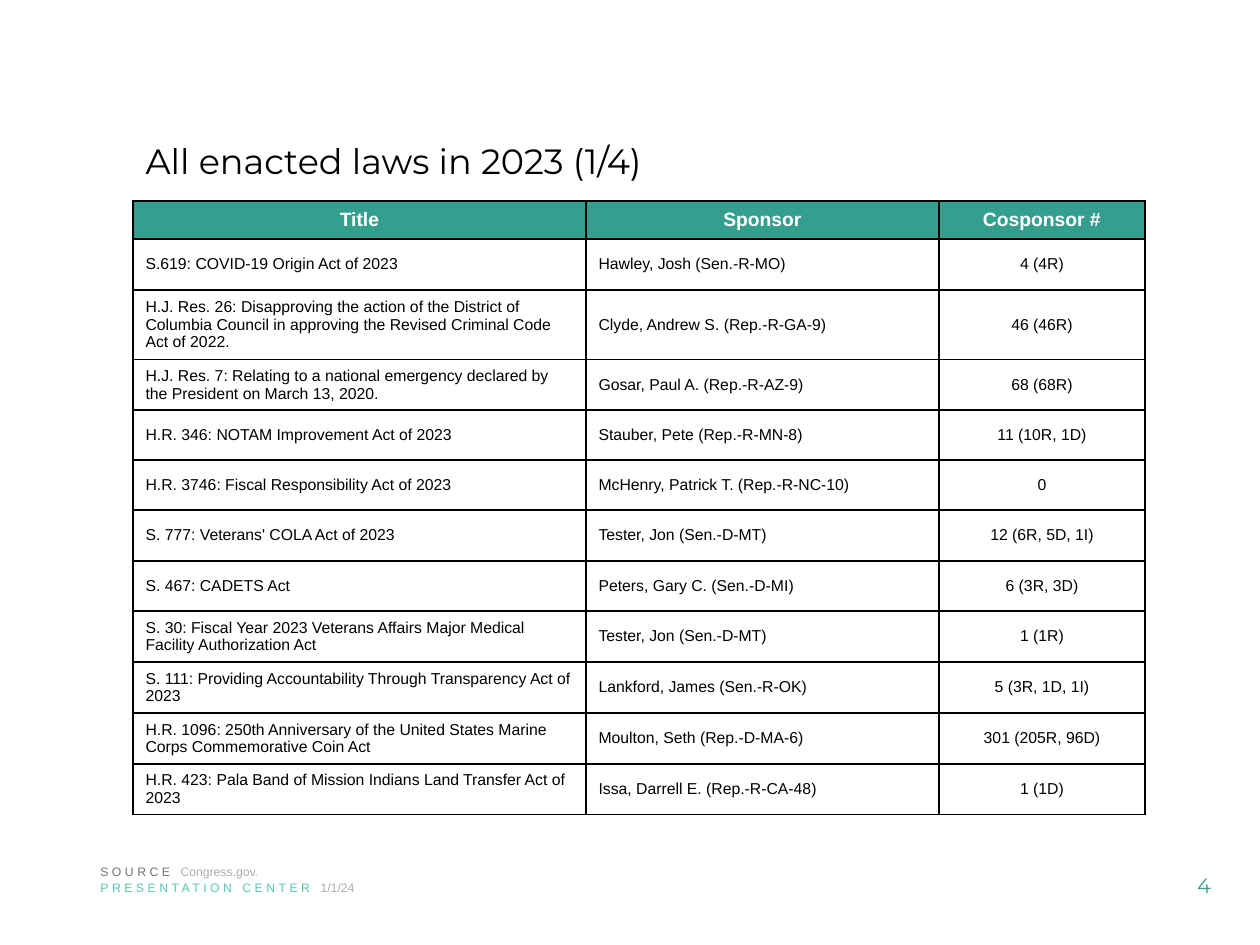
from dataclasses import dataclass

from lxml import etree
from pptx import Presentation
from pptx import util as u
from pptx.dml.color import RGBColor
from pptx.enum import text
from pptx.oxml.ns import qn

SCALE = 914400 / 126


@dataclass(frozen=True)
class Theme:
    head: str = "Montserrat"
    body: str = "Arial"
    ink: str = "000000"
    paper: str = "FFFFFF"
    teal: str = "359F8F"
    mint: str = "55C6B5"
    gray: str = "767171"
    pale: str = "AFABAB"
    title: int = 20
    page: int = 12
    label: int = 11
    cell: int = 9
    note: int = 7


T = Theme()
LEFT, MID = text.PP_ALIGN.LEFT, text.PP_ALIGN.CENTER
COLS = (("Title", 453, LEFT), ("Sponsor", 353, LEFT), ("Cosponsor #", 206, MID))
HEAD_H = 38
LAWS = (  # row height, title, sponsor, cosponsors
    (51, "S.619: COVID-19 Origin Act of 2023", "Hawley, Josh (Sen.-R-MO)", "4 (4R)"),
    (66, "H.J. Res. 26: Disapproving the action of the District of Columbia Council "
     "in approving the Revised Criminal Code Act of 2022.",
     "Clyde, Andrew S. (Rep.-R-GA-9)", "46 (46R)"),
    (50, "H.J. Res. 7: Relating to a national emergency declared by the President "
     "on March 13, 2020.", "Gosar, Paul A. (Rep.-R-AZ-9)", "68 (68R)"),
    (50, "H.R. 346: NOTAM Improvement Act of 2023",
     "Stauber, Pete (Rep.-R-MN-8)", "11 (10R, 1D)"),
    (50, "H.R. 3746: Fiscal Responsibility Act of 2023",
     "McHenry, Patrick T. (Rep.-R-NC-10)", "0"),
    (51, "S. 777: Veterans' COLA Act of 2023", "Tester, Jon (Sen.-D-MT)", "12 (6R, 5D, 1I)"),
    (50, "S. 467: CADETS Act", "Peters, Gary C. (Sen.-D-MI)", "6 (3R, 3D)"),
    (51, "S. 30: Fiscal Year 2023 Veterans Affairs Major Medical Facility "
     "Authorization Act", "Tester, Jon (Sen.-D-MT)", "1 (1R)"),
    (51, "S. 111: Providing Accountability Through Transparency Act of 2023",
     "Lankford, James (Sen.-R-OK)", "5 (3R, 1D, 1I)"),
    (51, "H.R. 1096: 250th Anniversary of the United States Marine Corps "
     "Commemorative Coin Act", "Moulton, Seth (Rep.-D-MA-6)", "301 (205R, 96D)"),
    (50, "H.R. 423: Pala Band of Mission Indians Land Transfer Act of 2023",
     "Issa, Darrell E. (Rep.-R-CA-48)", "1 (1D)"),
)


def px(n):
    return u.Emu(round(n * SCALE))


def style(font, face, size, color, bold=False):
    font.name, font.size, font.bold = face, u.Pt(size), bold
    font.color.rgb = RGBColor.from_string(color)


def title(slide, box, words):
    shape = slide.shapes.title
    shape.left, shape.top, shape.width, shape.height = map(px, box)
    frame = shape.text_frame
    frame.text = words
    frame.vertical_anchor = text.MSO_ANCHOR.MIDDLE
    para = frame.paragraphs[0]
    para.alignment, para.line_spacing = LEFT, 0.9
    style(para.font, T.head, T.title, T.ink)


def border(cell):
    """Draw a thin line on all four sides; call before setting the fill."""
    props = cell._tc.get_or_add_tcPr()
    for side in ("lnL", "lnR", "lnT", "lnB"):
        line = etree.SubElement(props, qn("a:" + side), w=str(u.Pt(1)))
        fill = etree.SubElement(line, qn("a:solidFill"))
        etree.SubElement(fill, qn("a:srgbClr"), val=T.ink)


def put(cell, words, align, head):
    border(cell)
    if head:
        cell.fill.solid()
        cell.fill.fore_color.rgb = RGBColor.from_string(T.teal)
    else:
        cell.fill.background()
    cell.text = words
    cell.vertical_anchor = text.MSO_ANCHOR.MIDDLE
    para = cell.text_frame.paragraphs[0]
    para.alignment = MID if head else align
    style(para.font, T.body, T.label if head else T.cell,
          T.paper if head else T.ink, head)


def table(slide, left, top):
    names, widths, aligns = zip(*COLS)
    rows = ((HEAD_H, *names), *LAWS)
    high = sum(row[0] for row in rows)
    grid = slide.shapes.add_table(
        len(rows), len(COLS), px(left), px(top), px(sum(widths)), px(high)).table
    for col, wide in zip(grid.columns, widths):
        col.width = px(wide)
    for r, (tall, *words) in enumerate(rows):
        grid.rows[r].height = px(tall)
        for c, word in enumerate(words):
            put(grid.cell(r, c), word, aligns[c], r == 0)


def note(slide, box, label, color, words):
    """Place a spaced label followed by plain pale text."""
    frame = slide.shapes.add_textbox(*map(px, box)).text_frame
    frame.word_wrap = True
    para = frame.paragraphs[0]
    for part, tint, gap in ((label + " ", color, 200), (words, T.pale, 0)):
        run = para.add_run()
        run.text = part
        style(run.font, T.body, T.note, tint)
        run.font._element.set("spc", str(gap))


def footer(slide, left, top):
    note(slide, (left, top, 845, 28), "SOURCE", T.gray, "Congress.gov.")
    note(slide, (left, top + 16, 370, 28), "PRESENTATION CENTER", T.mint, "1/1/24")


def page(slide, box, num):
    frame = slide.shapes.add_textbox(*map(px, box)).text_frame
    frame.word_wrap = True
    frame.vertical_anchor = text.MSO_ANCHOR.MIDDLE
    para = frame.paragraphs[0]
    para.text, para.alignment = num, MID
    style(para.font, T.head, T.page, T.teal)


def main():
    deck = Presentation()
    deck.slide_width, deck.slide_height = px(1260), px(945)
    slide = deck.slides.add_slide(deck.slide_layouts[5])
    page(slide, (1148, 860, 112, 50), "4")
    title(slide, (133, 113, 1012, 100), "All enacted laws in 2023 (1/4)")
    table(slide, 133, 201)
    footer(slide, 88, 858)
    deck.save("out.pptx")


if __name__ == "__main__":
    main()
